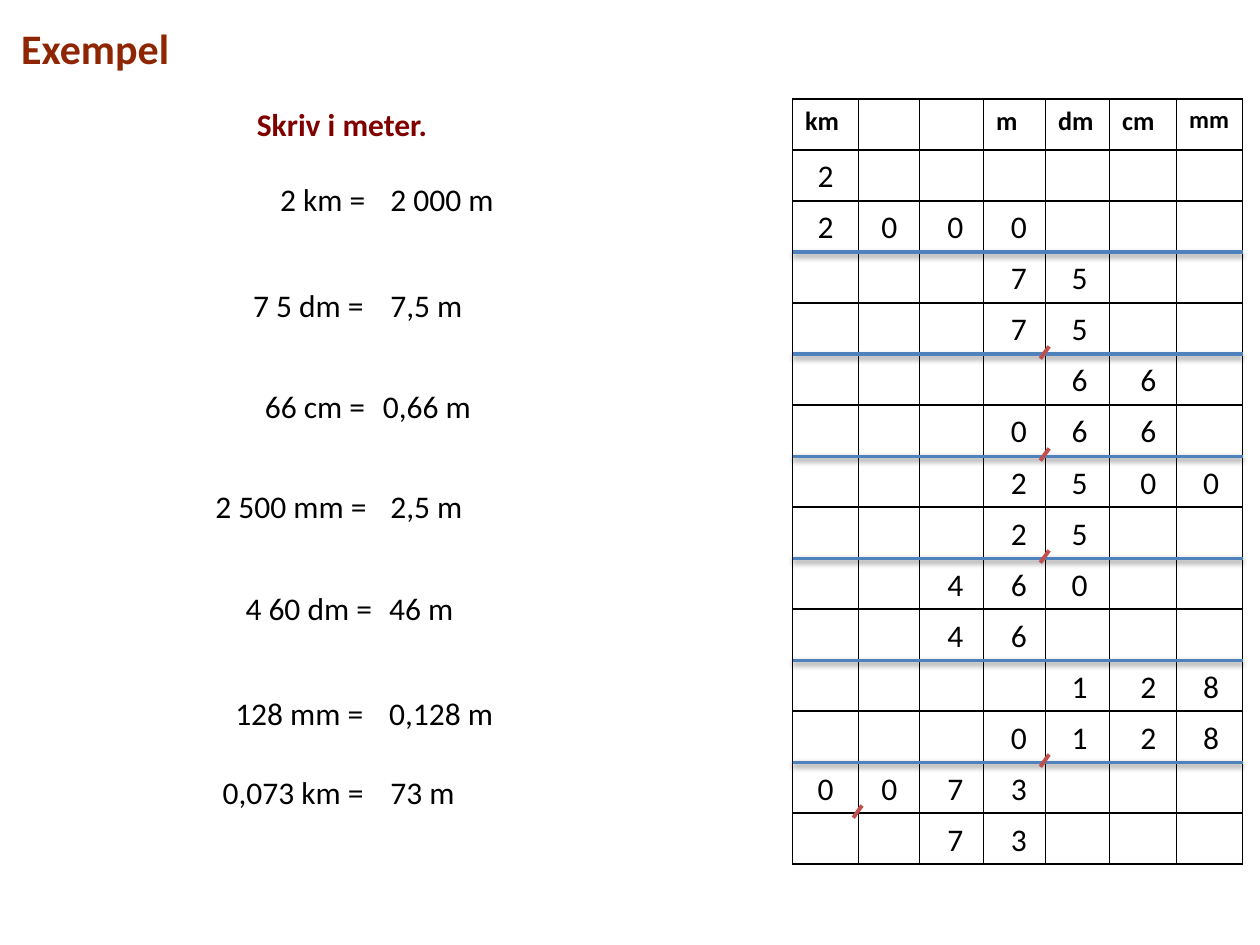
import pptx
import pptx.dml.color
import pptx.enum.shapes
import pptx.enum.text
import pptx.oxml
import pptx.oxml.ns
import pptx.util
from dataclasses import dataclass
from itertools import accumulate

Pt = pptx.util.Pt


@dataclass(frozen=True)
class Theme:
    font: str = "Calibri"
    ink: str = "000000"
    paper: str = "FFFFFF"
    title: str = "8E2503"
    instruction: str = "800000"
    divider: str = "4F81BD"
    comma: str = "C0504D"
    title_size: float = 24
    body_size: float = 18
    unit_size: float = 15
    last_unit_size: float = 14
    divider_width: float = 2
    comma_width: float = 2.25


THEME = Theme()
UNITS = ["km", "", "", "m", "dm", "cm", "mm"]
COLUMN_WIDTHS = [37.7, 34.9, 36.6, 35.4, 36.6, 38.3, 37.7]
DIGIT_OFFSETS = [7.2, 43.6, 81.4, 117.7, 152.4, 191.7, 227.5]
DIGIT_ROWS = ["2", "2000", "   75", "   75", "    66", "   066", "   2500",
              "   25", "  460", "  46", "    128", "   0128", "0073", "  73"]
DIVIDED_ROWS = [2, 4, 6, 8, 10, 12]
COMMAS = [(4, 4), (6, 4), (8, 4), (12, 4), (13, 1)]
EXERCISES = [
    (0, "2 km =", 64, 217, "2 000 m", 216, 74),
    (60.4, "7 5 dm =", 78.5, 216, "7,5 m", 216, 56),
    (118, "66 cm =", 72.7, 217, "0,66 m", 211.7, 65.5),
    (175.2, "2 500 mm =", 101.5, 217.5, "2,5 m", 216, 56),
    (233.4, "4 60 dm =", 87.8, 221, "46 m", 215.3, 52),
    (293.7, "128 mm =", 88.6, 216, "0,128 m", 215.3, 77),
    (338.8, "0,073 km =", 95.8, 216, "73 m", 216, 52),
]


def rgb(value):
    return pptx.dml.color.RGBColor.from_string(value)


def write(frame, words, *, size=THEME.body_size, color=THEME.ink, bold=False):
    paragraph = frame.paragraphs[0]
    paragraph.font.size = Pt(size)
    if words:
        run = paragraph.add_run()
        run.text = words
        run.font.name = THEME.font
        run.font.size = Pt(size)
        run.font.bold = bold
        run.font.color.rgb = rgb(color)


def add_label(slide, words, box, *, wrap=False, **style):
    frame = slide.shapes.add_textbox(*map(Pt, box)).text_frame
    frame.word_wrap = wrap
    frame.auto_size = pptx.enum.text.MSO_AUTO_SIZE.SHAPE_TO_FIT_TEXT
    write(frame, words, **style)


def add_line(slide, start, end, color, width, shadow=""):
    line = slide.shapes.add_connector(
        pptx.enum.shapes.MSO_CONNECTOR.STRAIGHT, *map(Pt, (*start, *end)))
    line.line.color.rgb = rgb(color)
    line.line.width = Pt(width)
    line._element.spPr.append(pptx.oxml.parse_xml(
        f'<a:effectLst {pptx.oxml.ns.nsdecls("a")}>{shadow}</a:effectLst>'))


def border_cell(cell):
    properties = cell._tc.get_or_add_tcPr()
    for position, side in enumerate(("lnL", "lnR", "lnT", "lnB")):
        properties.insert(position, pptx.oxml.parse_xml(
            f'<a:{side} {pptx.oxml.ns.nsdecls("a")} w="{Pt(1)}"><a:solidFill>'
            f'<a:srgbClr val="{THEME.ink}"/></a:solidFill></a:{side}>'))


def place_value_table(slide, left, top, width, height):
    row_count = len(DIGIT_ROWS) + 1
    pitch = height / row_count
    table = slide.shapes.add_table(
        row_count, len(UNITS), *map(Pt, (left, top, width, height))).table
    table.first_row = table.horz_banding = False
    for column, column_width in zip(table.columns, COLUMN_WIDTHS):
        column.width = Pt(column_width)
    for number, row in enumerate(table.rows):
        row.height = Pt(pitch)
        for unit, cell in zip(UNITS, row.cells):
            cell.fill.solid()
            cell.fill.fore_color.rgb = rgb(THEME.paper)
            cell.margin_top = cell.margin_bottom = Pt(3.5)
            border_cell(cell)
            size = THEME.last_unit_size if unit == "mm" else THEME.unit_size
            write(cell.text_frame, unit if number == 0 else "", size=size, bold=True)

    shadow = (f'<a:outerShdw blurRad="{Pt(3.1)}" dist="{Pt(1.6)}" dir="5400000" '
              f'rotWithShape="0"><a:srgbClr val="{THEME.ink}">'
              '<a:alpha val="38000"/></a:srgbClr></a:outerShdw>')
    for row in DIVIDED_ROWS:
        y = top + (row + 1) * pitch
        add_line(slide, (left, y), (left + width, y),
                 THEME.divider, THEME.divider_width, shadow)

    for row, digits in enumerate(DIGIT_ROWS, 1):
        for offset, digit in zip(DIGIT_OFFSETS, digits):
            if digit != " ":
                add_label(slide, digit,
                          (left + offset, top + row * pitch, 21, 29), wrap=True)

    edges = [left, *accumulate(COLUMN_WIDTHS, initial=left)][1:]
    for row, column in COMMAS:
        x, y = edges[column], top + (row + 1) * pitch - 1
        add_line(slide, (x + 2, y - 3.5), (x - 3, y + 3.5),
                 THEME.comma, THEME.comma_width)


def place_exercises(slide, left, top):
    for offset, task, task_width, end, answer, start, answer_width in EXERCISES:
        y = top + offset
        add_label(slide, task, (left + end - task_width, y, task_width, 29))
        add_label(slide, answer, (left + start, y, answer_width, 29))


def place_headings(slide, left, top):
    add_label(slide, "Exempel", (left, top, 100, 36),
              size=THEME.title_size, color=THEME.title, bold=True)
    add_label(slide, "Skriv i meter.", (left + 134.7, top + 46.8, 114.5, 29),
              color=THEME.instruction, bold=True)


def main():
    deck = pptx.Presentation()
    deck.slide_width, deck.slide_height = Pt(720), Pt(540)
    slide = deck.slides.add_slide(deck.slide_layouts[6])
    place_value_table(slide, 452.9, 56.7, sum(COLUMN_WIDTHS), 437.25)
    place_exercises(slide, 0, 99.4)
    place_headings(slide, 5, 9.4)
    deck.save("out.pptx")


if __name__ == "__main__":
    main()
